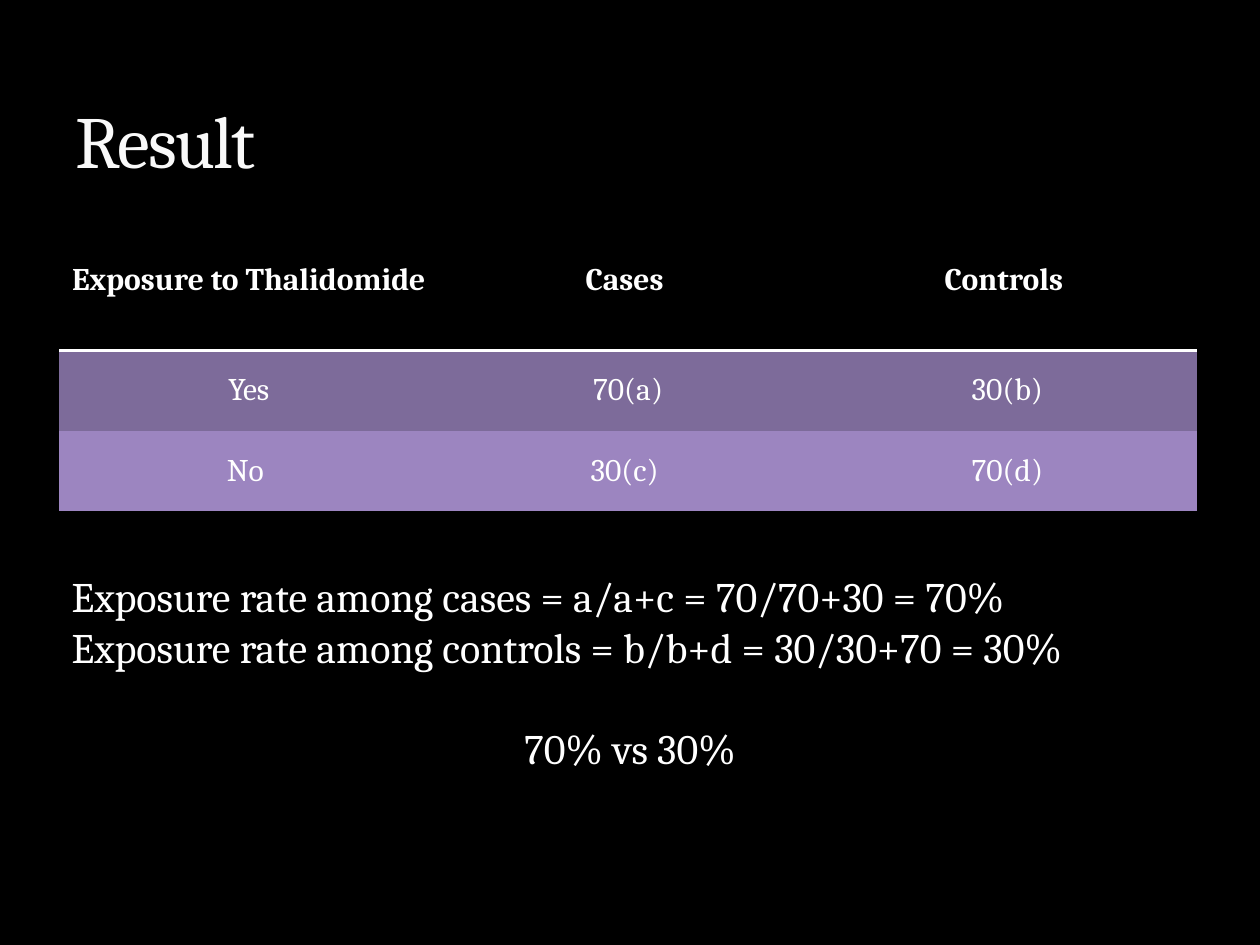
import pptx
import pptx.util
import pptx.dml.color
import pptx.enum.text
import pptx.oxml
import pptx.oxml.ns

Inches = pptx.util.Inches
Align = pptx.enum.text.PP_ALIGN
Anchor = pptx.enum.text.MSO_ANCHOR


def paint(fill, color):
    fill.solid()
    fill.fore_color.rgb = pptx.dml.color.RGBColor.from_string(color)


def style(para, size, color, align, bold=False):
    para.alignment = align
    for run in para.runs:
        run.font.name = "Cambria"
        run.font.size = pptx.util.Pt(size)
        run.font.bold = bold
        paint(run.font.fill, color)


deck = pptx.Presentation()
deck.slide_width = Inches(10)
deck.slide_height = Inches(7.5)
slide = deck.slides.add_slide(deck.slide_layouts[6])
paint(slide.background.fill, "000000")

rows = [
    ("000000", ["Exposure to Thalidomide", "Cases ", "Controls "]),
    ("7D6B9A", ["Yes", "70(a)", "30(b)"]),
    ("9C85C0", ["No ", "30(c) ", "70(d)"]),
]
frame = slide.shapes.add_table(3, 3, Inches(0.47), Inches(1.67), Inches(9.03), Inches(2.39))
table = frame.table
table.horz_banding = False
plain = "{2D5ABB26-0587-4C30-8999-92F81FD0307C}"
table._tbl.tblPr.find(pptx.oxml.ns.qn("a:tableStyleId")).text = plain
rule = (
    '<a:lnB %s w="25400"><a:solidFill><a:srgbClr val="FFFFFF"/></a:solidFill></a:lnB>'
    % pptx.oxml.ns.nsdecls("a")
)
for r, (color, words) in enumerate(rows):
    table.rows[r].height = Inches(0.64 if r else 1.11)
    for c, word in enumerate(words):
        cell = table.cell(r, c)
        cell.text_frame.text = word
        cell.vertical_anchor = Anchor.MIDDLE
        paint(cell.fill, color)
        style(cell.text_frame.paragraphs[0], 18, "FFFFFF", Align.CENTER, r == 0)
        if r == 0:
            cell._tc.get_or_add_tcPr().insert(0, pptx.oxml.parse_xml(rule))

title = slide.shapes.add_textbox(Inches(0.5), Inches(0.17), Inches(9), Inches(1.33)).text_frame
title.word_wrap = True
title.vertical_anchor = Anchor.BOTTOM
title.text = "Result"
style(title.paragraphs[0], 42, "F9F9F9", Align.LEFT)
title.paragraphs[0].runs[0]._r.get_or_add_rPr().set("spc", "-100")

rates = slide.shapes.add_textbox(Inches(0.47), Inches(4.48), Inches(9.06), Inches(1.72)).text_frame
rates.word_wrap = True
rates.text = "\n".join([
    "Exposure rate among cases = a/a+c = 70/70+30 = 70%",
    "Exposure rate among controls = b/b+d = 30/30+70 = 30%",
    "70% vs 30%",
])
for para, align in zip(rates.paragraphs, [Align.JUSTIFY, Align.JUSTIFY, Align.CENTER]):
    style(para, 24, "FFFFFF", align)
rates.paragraphs[2].space_before = pptx.util.Pt(29)

deck.save("out.pptx")
